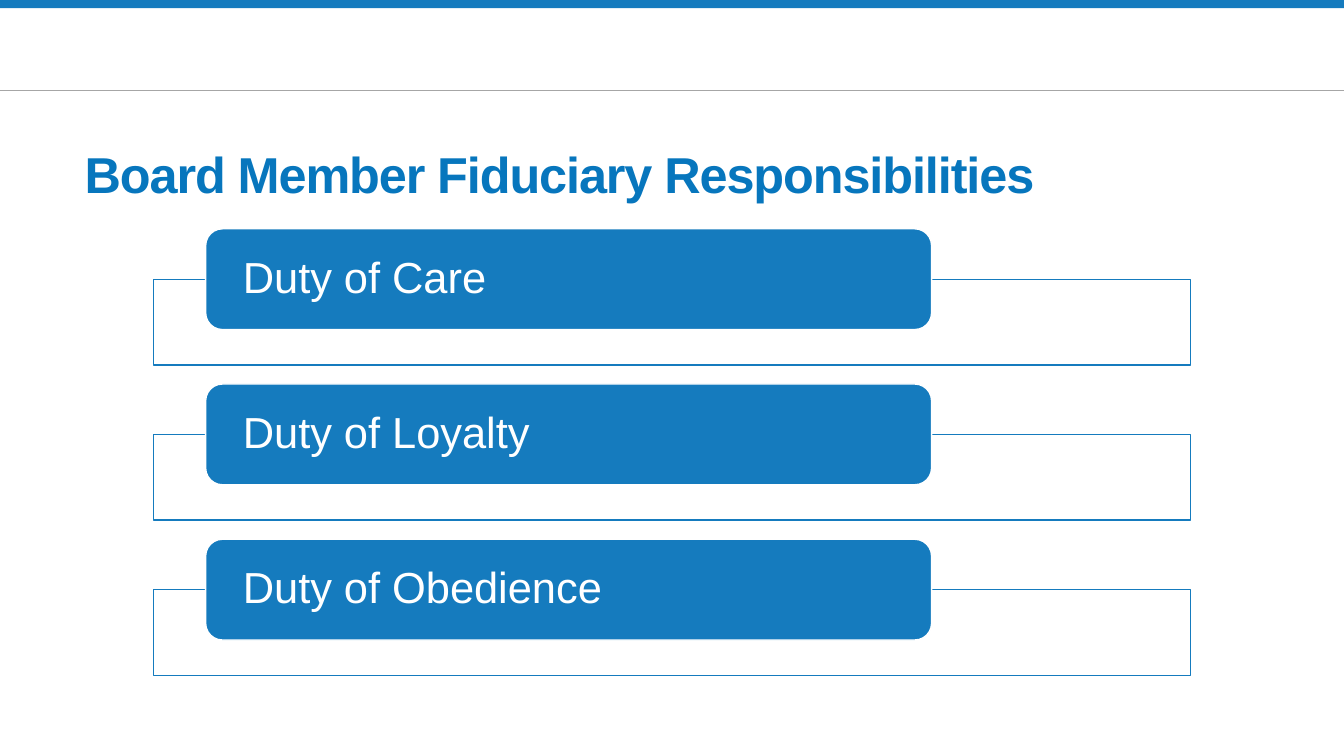
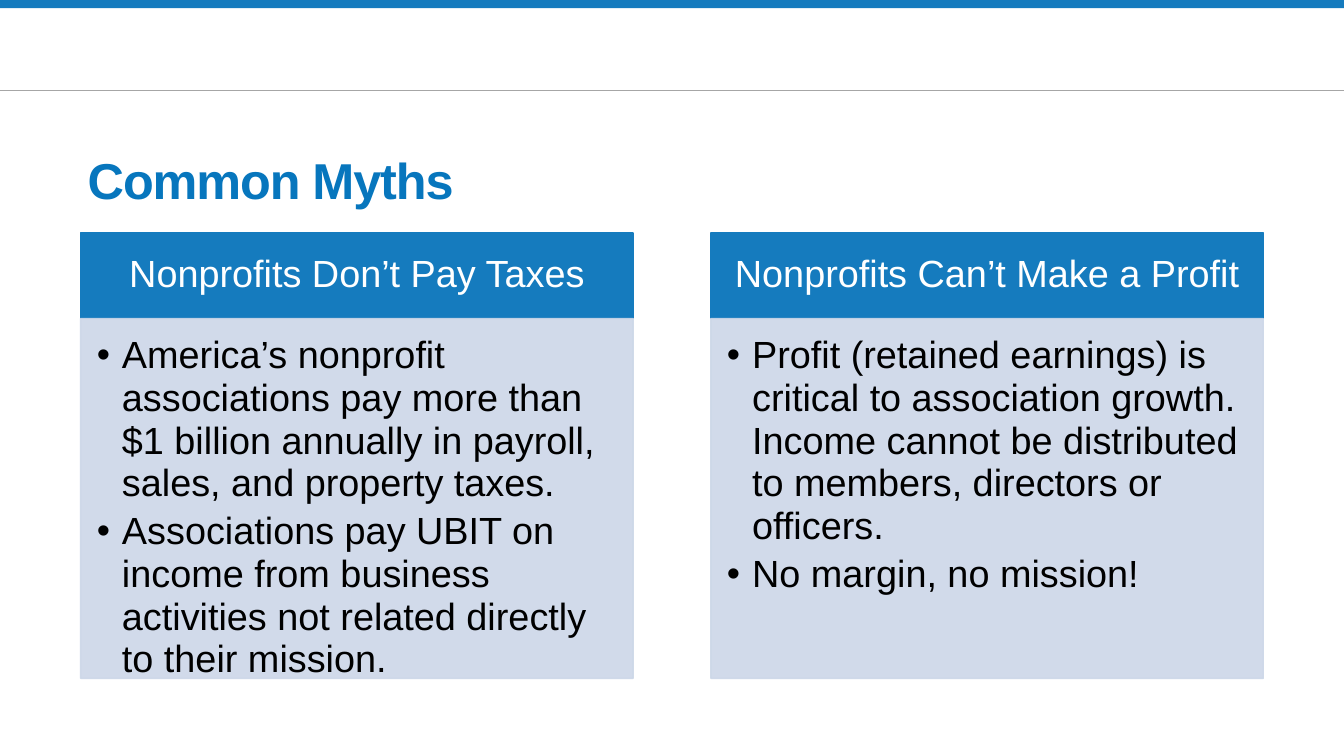
from lxml import etree
from pptx import Presentation
from pptx.dml.color import RGBColor
from pptx.enum.shapes import MSO_CONNECTOR, MSO_SHAPE
from pptx.enum.text import MSO_ANCHOR, MSO_AUTO_SIZE, PP_ALIGN
from pptx.oxml.ns import qn
from pptx.util import Pt

PX = 9144
WIDE, HIGH = 1333, 750
FONT = "Arial"
HEX = {
    "blue": "157BBE",
    "title": "0776BD",
    "pale": "CCD7E8",
    "rule": "A6A6A6",
    "white": "FFFFFF",
    "black": "000000",
}
RECT, ROUND = MSO_SHAPE.RECTANGLE, MSO_SHAPE.ROUNDED_RECTANGLE
LINE = MSO_CONNECTOR.STRAIGHT
TOP, MID = MSO_ANCHOR.TOP, MSO_ANCHOR.MIDDLE
LEFT, CENTER = PP_ALIGN.LEFT, PP_ALIGN.CENTER
FIXED = MSO_AUTO_SIZE.NONE

DUTIES = ["Duty of Care", "Duty of Loyalty", "Duty of Obedience"]
MYTHS = [
    ("Nonprofits Don’t Pay Taxes", [
        "America’s nonprofit associations pay more than $1 billion annually "
        "in payroll, sales, and property taxes.",
        "Associations pay UBIT on income from business activities not "
        "related directly to their mission.",
    ]),
    ("Nonprofits Can’t Make a Profit", [
        "Profit (retained earnings) is critical to association growth. "
        "Income cannot be distributed to members, directors or officers.",
        "No margin, no mission!",
    ]),
]


def color(name):
    return RGBColor.from_string(HEX[name])


def emu(*sizes):
    return [size * PX for size in sizes]


def place(shape, box):
    shape.left, shape.top, shape.width, shape.height = emu(*box)


def paint(shape, fill, line=None, alpha=None):
    shape.fill.solid()
    shape.fill.fore_color.rgb = color(fill)
    if line:
        shape.line.color.rgb = color(line)
        shape.line.width = Pt(1)
    else:
        shape.line.fill.background()
    if alpha:
        for node in shape.element.spPr.iter(qn("a:srgbClr")):
            if node.get("val") == HEX[fill]:
                etree.SubElement(node, qn("a:alpha"), val=str(alpha * 1000))


def block(slide, kind, box, fill, line=None, alpha=None):
    shape = slide.shapes.add_shape(kind, *emu(*box))
    shape.shadow.inherit = False
    paint(shape, fill, line, alpha)
    return shape


def bullet(para):
    props = para._p.get_or_add_pPr()
    props.set("marL", str(25 * PX))
    props.set("indent", str(-25 * PX))
    etree.SubElement(props, qn("a:buChar"), char="•")


def text(shape, lines, size, ink, pad, anchor=MID, align=LEFT, bold=False,
         lead=1.0, after=0, kern=0, dots=False):
    frame = shape.text_frame
    frame.word_wrap = True
    frame.auto_size = FIXED
    frame.vertical_anchor = anchor
    (frame.margin_left, frame.margin_top,
     frame.margin_right, frame.margin_bottom) = emu(*pad)
    for i, words in enumerate(lines):
        para = frame.add_paragraph() if i else frame.paragraphs[0]
        if dots:
            bullet(para)
        para.alignment = align
        para.line_spacing = lead
        para.space_before, para.space_after = Pt(0), Pt(after)
        run = para.add_run()
        run.text = words
        font = run.font
        font.name, font.size, font.bold = FONT, Pt(size), bold
        font.color.rgb = color(ink)
        if kern:
            run._r.get_or_add_rPr().set("spc", str(kern))


def title(slide, words, box):
    shape = slide.shapes.title
    place(shape, box)
    text(shape, [words], 36, "title", (9, 10, 9, 0), anchor=TOP,
         bold=True, kern=-80)


def frame_master(deck, slide):
    rule = slide.shapes.add_connector(LINE, *emu(0, 90, WIDE, 90))
    rule.line.color.rgb = color("rule")
    rule.line.width = Pt(0.5)
    etree.SubElement(rule.element.spPr, qn("a:effectLst"))
    band = block(slide, RECT, (0, 0, WIDE, 8), "blue")
    for shape in (rule, band):
        deck.slide_master.shapes.element.append(shape.element)


def duty(slide, words, top):
    block(slide, RECT, (152, top + 50, 1029, 85), "white", "blue", 90)
    label = block(slide, ROUND, (204, top, 720, 100), "blue", "white")
    text(label, [words], 31, "white", (32, 5, 32, 5), lead=0.9)


def myth(head, body, words, points, left):
    place(head, (left, 231, 548, 85))
    paint(head, "blue", "blue")
    text(head, [words], 27, "white", (21, 12, 21, 12), align=CENTER, lead=0.9)
    place(body, (left, 316, 548, 357))
    paint(body, "pale", "pale", 90)
    text(body, points, 27, "black", (16, 16, 21, 24), anchor=TOP,
         lead=0.94, after=4, dots=True)


def main():
    deck = Presentation()
    deck.slide_width, deck.slide_height = emu(WIDE, HIGH)

    duties = deck.slides.add_slide(deck.slide_layouts.get_by_name("Title Only"))
    frame_master(deck, duties)
    title(duties, "Board Member Fiduciary Responsibilities", (75, 132, 1197, 70))
    for i, words in enumerate(DUTIES):
        duty(duties, words, 227 + i * 154)

    myths = deck.slides.add_slide(deck.slide_layouts.get_by_name("Comparison"))
    title(myths, "Common Myths", (78, 138, 914, 71))
    holders = myths.placeholders
    for i, (words, points) in enumerate(MYTHS):
        myth(holders[2 * i + 1], holders[2 * i + 2], words, points, 80 + i * 625)

    deck.save("out.pptx")


if __name__ == "__main__":
    main()
